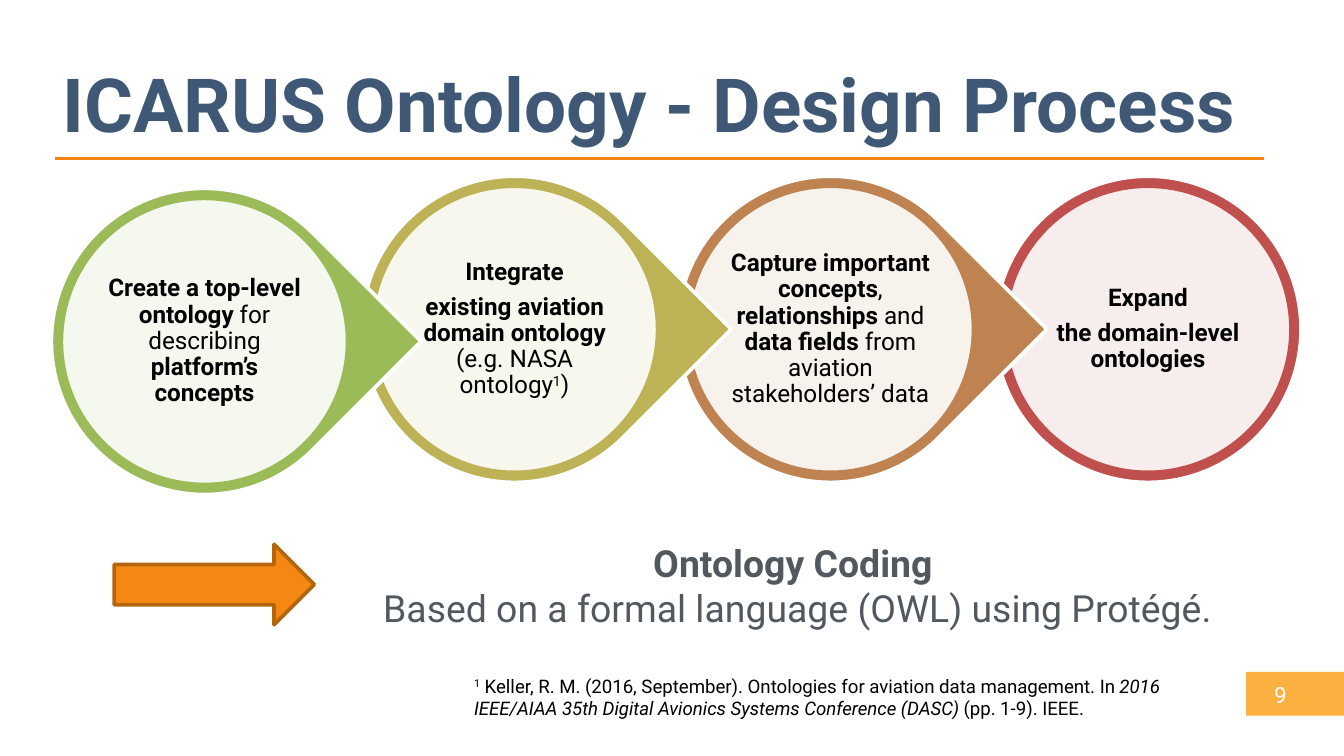
"""Build the ontology design process slide."""
from dataclasses import dataclass

from lxml import etree
from pptx import Presentation
from pptx import util as u
from pptx.dml.color import RGBColor
from pptx.enum import shapes, text
from pptx.oxml.ns import qn

Cm, Pt = u.Cm, u.Pt
Kind, Mid = shapes.MSO_SHAPE, text.MSO_ANCHOR.MIDDLE
Top, Grow = text.MSO_ANCHOR.TOP, text.MSO_AUTO_SIZE.SHAPE_TO_FIT_TEXT
Fixed = text.MSO_AUTO_SIZE.NONE
Left, Center = text.PP_ALIGN.LEFT, text.PP_ALIGN.CENTER


@dataclass(frozen=True)
class Theme:
    font: str = "Roboto"
    navy: str = "3E5875"
    gray: str = "525860"
    black: str = "000000"
    white: str = "FFFFFF"
    rule: str = "F5850D"
    badge: str = "FCB040"
    arrow: str = "F58813"
    edge: str = "B5650E"
    green: str = "9BBB59"
    olive: str = "BDB255"
    brown: str = "BE8351"
    red: str = "C0504D"
    head: int = 40
    lead: int = 20
    body: int = 13
    page: int = 12
    note: int = 10


look = Theme()


def paint(shape, fill, line=None):
    shape.shadow.inherit = False
    shape.fill.solid()
    shape.fill.fore_color.rgb = RGBColor.from_string(fill)
    if line:
        shape.line.color.rgb = RGBColor.from_string(line)
        shape.line.width = Pt(2)
    else:
        shape.line.fill.background()


def write(shape, paras, size, color, pad, form, align=Center, **space):
    frame = shape.text_frame
    sides = ("margin_left", "margin_top", "margin_right", "margin_bottom")
    form = {"word_wrap": True, **dict(zip(sides, map(Cm, pad))), **form}
    for name, val in form.items():
        setattr(frame, name, val)
    for num, runs in enumerate(paras):
        para = frame.add_paragraph() if num else frame.paragraphs[0]
        for name, val in {"alignment": align, **space}.items():
            setattr(para, name, val)
        for words, marks in runs:
            if words == "\n":
                para.add_line_break()
                continue
            run = para.add_run()
            run.text = words
            style = {"name": look.font, "size": Pt(size),
                     "bold": "b" in marks, "italic": "i" in marks}
            for name, val in style.items():
                setattr(run.font, name, val)
            run.font.color.rgb = RGBColor.from_string(color)
            if "s" in marks:
                run.font._element.set("baseline", "30000")


deck = Presentation()
deck.slide_width, deck.slide_height = Cm(25.4), Cm(14.29)
slide = deck.slides.add_slide(deck.slide_layouts[5])
items = slide.shapes

title = items.title
place = {"left": 1.04, "top": 0.81, "width": 22.83, "height": 1.73}
for name, val in place.items():
    setattr(title, name, Cm(val))
write(title, [[("ICARUS Ontology - Design Process", "b")]], look.head,
      look.navy, (0.15, 0.28, 0.15, 0),
      {"vertical_anchor": Top, "auto_size": Fixed}, Left)

rule = items.add_connector(shapes.MSO_CONNECTOR.STRAIGHT,
                           Cm(1.04), Cm(3), Cm(23.88), Cm(3))
rule.line.color.rgb = RGBColor.from_string(look.rule)
rule.line.width = Pt(1.5)
etree.SubElement(rule._element.spPr, qn("a:effectLst"))

badge = items.add_shape(Kind.RECTANGLE, Cm(23.55), Cm(12.7), Cm(1.85), Cm(0.83))
paint(badge, look.badge)
page = items.add_textbox(Cm(23.88), Cm(12.83), Cm(0.64), Cm(0.53))
write(page, [[("9", "")]], look.page, look.white, [0.05] * 4, {})

steps = [
    (18.8, 3.33, Kind.OVAL, look.red,
     [[("Expand", "b")], [("the domain-level ontologies", "b")]]),
    (12.8, 3.33, Kind.TEAR, look.brown,
     [[("Capture important concepts", "b"), (", ", ""),
       ("relationships", "b"), (" and ", ""), ("data fields ", "b"),
       ("from aviation stakeholders’ data", "")]]),
    (6.83, 3.33, Kind.TEAR, look.olive,
     [[("Integrate", "b")],
      [("existing aviation domain ontology ", "b"),
       ("(e.g. NASA ontology", ""), ("1", "s"), (")", "")]]),
    (0.97, 3.56, Kind.TEAR, look.green,
     [[("Create a top-level ontology", "b"), (" for describing ", ""),
       ("platform’s concepts", "b")]]),
]
for x, y, kind, hue, paras in steps:
    group = items.add_group_shape().shapes
    drop = group.add_shape(kind, Cm(x), Cm(y), Cm(5.79), Cm(5.79))
    paint(drop, hue, look.white)
    drop.rotation = 45 if kind == Kind.TEAR else 0
    disc = group.add_shape(Kind.OVAL, Cm(x + 0.19), Cm(y + 0.19),
                           Cm(5.41), Cm(5.41))
    paint(disc, look.white, hue)
    tint = disc._element.spPr.find(qn("a:solidFill"))[0]
    etree.SubElement(tint, qn("a:alpha"), val="90000")
    write(disc, paras, look.body, look.black, [0.02] * 4,
          {"vertical_anchor": Mid}, line_spacing=0.9, space_after=Pt(4.5))

arrow = items.add_shape(Kind.RIGHT_ARROW, Cm(2.16), Cm(10.29), Cm(3.78), Cm(1.52))
paint(arrow, look.arrow, look.edge)

pad = (0.25, 0.13, 0.25, 0.13)
code = items.add_textbox(Cm(6.3), Cm(10.08), Cm(17.55), Cm(1.96))
write(code, [[("Ontology Coding ", "b"), ("\n", ""),
              ("Based on a formal language (OWL) using Protégé.", "")]],
      look.lead, look.gray, pad, {"auto_size": Grow}, space_after=Pt(6))

note = items.add_textbox(Cm(8.23), Cm(12.62), Cm(14.91), Cm(1.12))
write(note, [[("1", "s"),
              (" Keller, R. M. (2016, September). Ontologies for aviation "
               "data management. In ", ""),
              ("2016 IEEE/AIAA 35th Digital Avionics Systems Conference "
               "(DASC)", "i"), (" (pp. 1-9). IEEE.", "")]],
      look.note, look.black, pad, {"auto_size": Grow}, Left)
ppr = note.text_frame.paragraphs[0]._p.get_or_add_pPr()
ppr.set("marL", str(Cm(0.48)))

deck.save("out.pptx")
